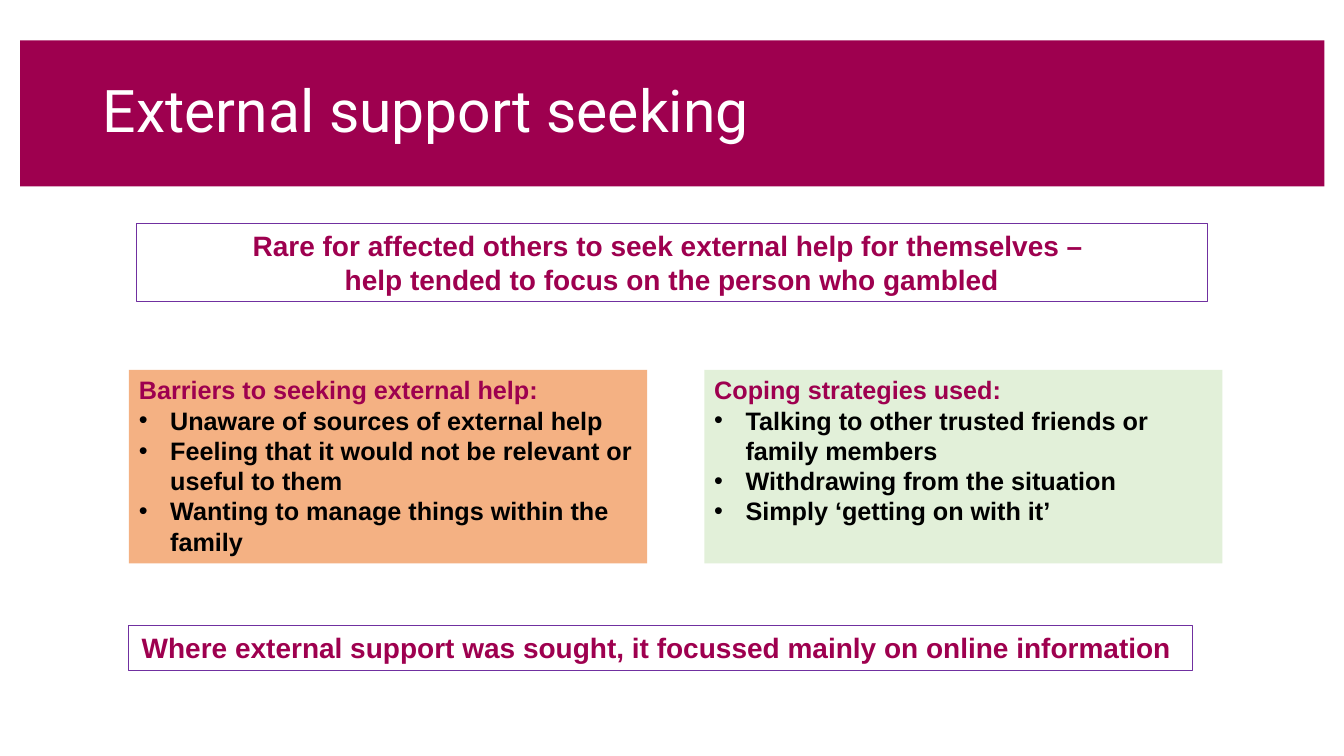
from dataclasses import dataclass

import lxml.etree
import pptx
import pptx.dml.color
import pptx.enum.shapes
import pptx.enum.text
import pptx.oxml.ns
import pptx.util

Cm = pptx.util.Cm
Pt = pptx.util.Pt
Align = pptx.enum.text.PP_ALIGN
Anchor = pptx.enum.text.MSO_ANCHOR


@dataclass(frozen=True)
class Theme:
    plum: str = "9E004F"
    peach: str = "F4B183"
    mint: str = "E2F0D9"
    purple: str = "7030A0"
    white: str = "FFFFFF"
    black: str = "000000"
    head: str = "Roboto"
    body: str = "Arial"
    title: int = 42
    large: int = 20
    text: int = 18


THEME = Theme()


def rgb(code):
    return pptx.dml.color.RGBColor.from_string(code)


def style(para, font, size, color, bold=False):
    for run in para.runs:
        run.font.name = font
        run.font.size = Pt(size)
        run.font.color.rgb = rgb(color)
        run.font.bold = bold


def bullet(para):
    """Give the paragraph a hanging round bullet."""
    props = para._p.get_or_add_pPr()
    props.set("marL", str(Cm(0.79)))
    props.set("indent", str(-Cm(0.79)))
    qn = pptx.oxml.ns.qn
    lxml.etree.SubElement(props, qn("a:buFont"), typeface=THEME.body)
    lxml.etree.SubElement(props, qn("a:buChar"), char="•")


def box(slide, area, fill=None, line=None):
    """Add a plain rectangle; area is left, top, width, height in cm."""
    shape = slide.shapes.add_shape(
        pptx.enum.shapes.MSO_SHAPE.RECTANGLE, *map(Cm, area))
    shape.shadow.inherit = False
    if fill:
        shape.fill.solid()
        shape.fill.fore_color.rgb = rgb(fill)
    else:
        shape.fill.background()
    if line:
        shape.line.color.rgb = rgb(line)
        shape.line.width = Pt(0.75)
    else:
        shape.line.fill.background()
    shape.text_frame.word_wrap = True
    shape.text_frame.vertical_anchor = Anchor.TOP
    return shape


def banner(slide, text):
    """Set the slide title over a full-width band."""
    title = slide.shapes.title
    band = box(slide, (0.51, 1.02, 32.87, 3.68), fill=THEME.plum)
    title._element.addprevious(band._element)
    title.left, title.top = Cm(2.34), Cm(1.02)
    title.width, title.height = Cm(29.69), Cm(3.68)
    frame = title.text_frame
    frame.text = text
    frame.vertical_anchor = Anchor.MIDDLE
    para = frame.paragraphs[0]
    para.alignment = Align.LEFT
    para.line_spacing = 0.9
    style(para, THEME.head, THEME.title, THEME.white)


def callout(slide, area, text):
    frame = box(slide, area, line=THEME.purple).text_frame
    frame.text = text
    for para in frame.paragraphs:
        para.alignment = Align.CENTER
        style(para, THEME.body, THEME.large, THEME.plum, True)


def panel(slide, left, fill, head, items):
    """Add a filled box with a heading and bulleted items."""
    frame = box(slide, (left, 9.32, 13.06, 4.88), fill=fill).text_frame
    frame.text = "\n".join([head, *items])
    first, *rest = frame.paragraphs
    first.alignment = Align.LEFT
    style(first, THEME.body, THEME.text, THEME.plum, True)
    for para in rest:
        para.alignment = Align.LEFT
        bullet(para)
        style(para, THEME.body, THEME.text, THEME.black, True)


def main():
    deck = pptx.Presentation()
    deck.slide_width, deck.slide_height = Cm(33.87), Cm(19.05)
    slide = deck.slides.add_slide(deck.slide_layouts.get_by_name("Title Only"))
    banner(slide, "External support seeking")
    panel(slide, 3.25, THEME.peach, "Barriers to seeking external help:", [
        "Unaware of sources of external help",
        "Feeling that it would not be relevant or useful to them",
        "Wanting to manage things within the family",
    ])
    panel(slide, 17.75, THEME.mint, "Coping strategies used:", [
        "Talking to other trusted friends or family members",
        "Withdrawing from the situation",
        "Simply ‘getting on with it’",
    ])
    callout(slide, (3.45, 5.64, 26.97, 1.96),
            "Rare for affected others to seek external help for themselves – \n"
            "help tended to focus on the person who gambled")
    callout(slide, (3.25, 15.77, 26.8, 1.12),
            "Where external support was sought, "
            "it focussed mainly on online information ")
    deck.save("out.pptx")


if __name__ == "__main__":
    main()
